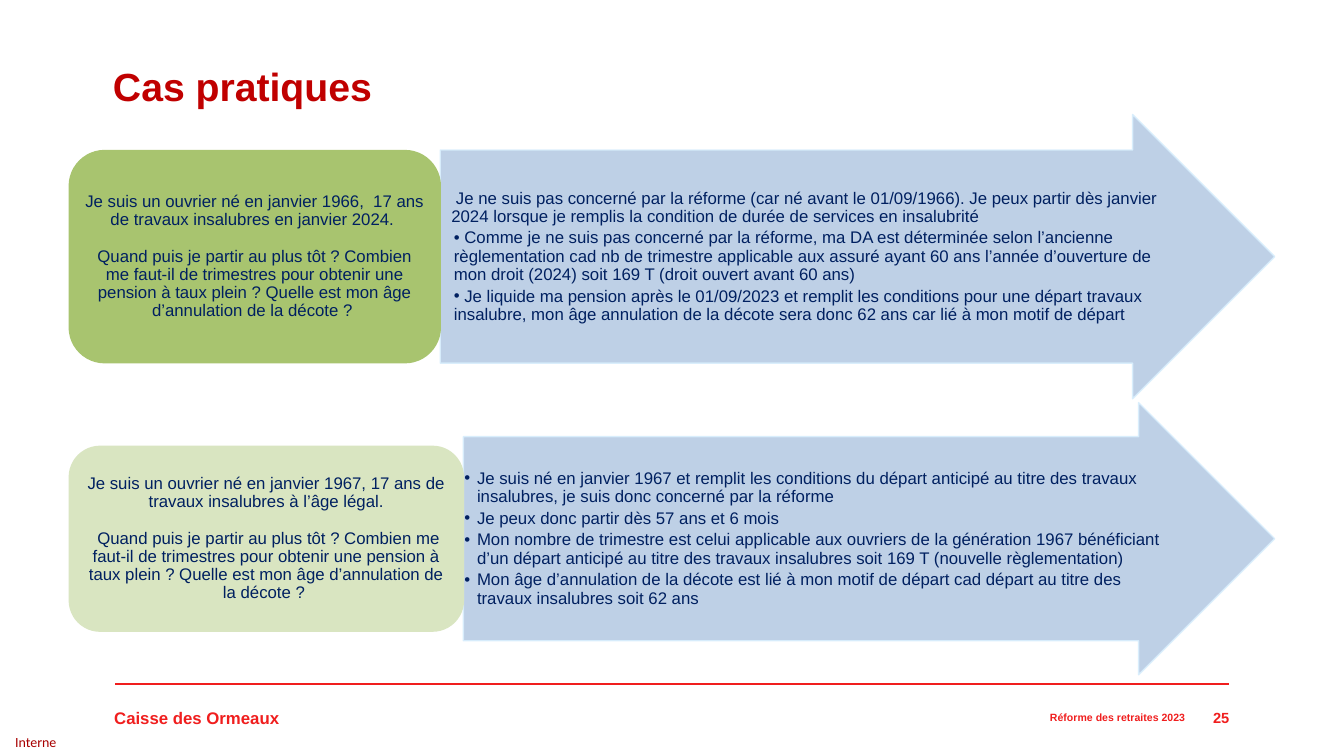
from lxml import etree
from pptx import Presentation
from pptx.dml.color import RGBColor
from pptx.enum.shapes import MSO_CONNECTOR, MSO_SHAPE
from pptx.enum.text import MSO_ANCHOR, MSO_AUTO_SIZE, PP_ALIGN
from pptx.oxml.ns import qn
from pptx.util import Pt

COLORS = {
    "title": "C00000", "footer": "F01E1E", "label": "A80000", "text": "002060",
    "green": "A8C46F", "pale_green": "D9E5C1", "arrow": "B7CBE4", "arrow_line": "D8EEFD",
}
LEFT, RIGHT = 49.5, 910.5

QUESTION_END = ("Quand puis je partir au plus tôt ? Combien me faut-il de trimestres pour obtenir "
                "une pension à taux plein ? Quelle est mon âge d’annulation de la décote ? ")
CASES = [
    dict(center=183.3, size=(265, 151.5), arrow_height=203, color="green", hanging=False,
         question=["Je suis un ouvrier né en janvier 1966,  17 ans de travaux insalubres en janvier 2024. ",
                   QUESTION_END],
         intro=" Je ne suis pas concerné par la réforme (car né avant le 01/09/1966). "
               "Je peux partir dès janvier 2024 lorsque je remplis la condition de durée de "
               "services en insalubrité",
         answers=[
             " Comme je ne suis pas concerné par la réforme, ma DA est déterminée selon l’ancienne "
             "règlementation cad nb de trimestre applicable aux assuré ayant 60 ans l’année "
             "d’ouverture de mon droit (2024) soit 169 T (droit ouvert avant 60 ans)",
             " Je liquide ma pension après le 01/09/2023 et remplit les conditions pour une départ "
             "travaux insalubre, mon âge annulation de la décote sera donc 62 ans car lié à mon "
             "motif de départ"]),
    dict(center=384.8, size=(281.5, 132), arrow_height=194.4, color="pale_green", hanging=True,
         question=["Je suis un ouvrier né en janvier 1967, 17 ans de travaux insalubres à l’âge légal.",
                   " " + QUESTION_END],
         intro=None,
         answers=[
             "Je suis né en janvier 1967 et remplit les conditions du départ anticipé au titre des "
             "travaux insalubres, je suis donc concerné par la réforme",
             "Je peux donc partir dès 57 ans et 6 mois ",
             "Mon nombre de trimestre est celui applicable aux ouvriers de la génération 1967 "
             "bénéficiant d’un départ anticipé au titre des travaux insalubres soit 169 T "
             "(nouvelle règlementation)",
             "Mon âge d’annulation de la décote est lié à mon motif de départ cad départ au titre "
             "des travaux insalubres soit 62 ans"]),
]


def rgb(name):
    return RGBColor.from_string(COLORS[name])


def set_margins(frame, left, top, right, bottom):
    frame.margin_left, frame.margin_top = Pt(left), Pt(top)
    frame.margin_right, frame.margin_bottom = Pt(right), Pt(bottom)


def write(paragraph, text, size=12, color="text", bold=False, font="Arial",
          align=PP_ALIGN.LEFT, spacing=0.9, before=0, after=0, margin=0, indent=0, bullet=False):
    run = paragraph.add_run()
    run.text = text
    run.font.size, run.font.bold, run.font.name = Pt(size), bold, font
    run.font.color.rgb = rgb(color)
    paragraph.alignment = align
    paragraph.line_spacing = spacing
    paragraph.space_before, paragraph.space_after = Pt(before), Pt(after)
    properties = paragraph._p.get_or_add_pPr()
    properties.set("marL", str(Pt(margin)))
    properties.set("indent", str(Pt(indent)))
    if bullet:
        etree.SubElement(properties, qn("a:buFont")).set("typeface", "Arial")
        etree.SubElement(properties, qn("a:buChar")).set("char", "•")
    else:
        etree.SubElement(properties, qn("a:buNone"))


def next_paragraph(frame):
    """Return the empty first paragraph, or a new one."""
    first = frame.paragraphs[0]
    return frame.add_paragraph() if first.runs else first


def add_panel(slide, preset, box, fill, line, opacity=None):
    shape = slide.shapes.add_shape(preset, *map(Pt, box))
    shape.shadow.inherit = False
    shape.fill.solid()
    shape.fill.fore_color.rgb = rgb(fill)
    shape.line.color.rgb = rgb(line)
    shape.line.width = Pt(1)
    if opacity:
        for color in shape._element.spPr.iter(qn("a:srgbClr")):
            etree.SubElement(color, qn("a:alpha")).set("val", str(opacity * 1000))
    shape.text_frame.word_wrap = True
    shape.text_frame.vertical_anchor = MSO_ANCHOR.MIDDLE
    return shape


def add_label(slide, box, text, margins=(7.2, 3.6, 7.2, 3.6), **text_format):
    frame = slide.shapes.add_textbox(*map(Pt, box)).text_frame
    frame.word_wrap = True
    frame.vertical_anchor = MSO_ANCHOR.MIDDLE
    set_margins(frame, *margins)
    write(frame.paragraphs[0], text, spacing=1, **text_format)


def add_title(slide, box, text):
    title = slide.shapes.title
    title.left, title.top, title.width, title.height = map(Pt, box)
    frame = title.text_frame
    frame.auto_size = MSO_AUTO_SIZE.NONE
    frame.vertical_anchor = MSO_ANCHOR.MIDDLE
    write(frame.paragraphs[0], text, size=28, color="title", bold=True)


def add_case(slide, center, size, arrow_height, color, hanging, question, intro, answers):
    """Place a question box and its answer arrow on one horizontal axis."""
    width, height = size
    arrow_left = LEFT + width
    arrow = add_panel(slide, MSO_SHAPE.RIGHT_ARROW,
                      (arrow_left, center - arrow_height / 2, RIGHT - arrow_left, arrow_height),
                      "arrow", "arrow_line", opacity=90)
    arrow.adjustments[0], arrow.adjustments[1] = 0.75, 0.5
    frame = arrow.text_frame
    set_margins(frame, 0.7, 0.7, 0.7, 0.7)
    if intro:
        write(next_paragraph(frame), intro, margin=7.2, after=2.6)
    for answer in answers:
        write(next_paragraph(frame), answer, margin=9, indent=-9 if hanging else 0,
              after=2.6, bullet=True)

    panel = add_panel(slide, MSO_SHAPE.ROUNDED_RECTANGLE,
                      (LEFT, center - height / 2, width, height), color, color)
    set_margins(panel.text_frame, 3.6, 2.2, 3.6, 2.2)
    for index, text in enumerate(question):
        write(next_paragraph(panel.text_frame), text, align=PP_ALIGN.CENTER, before=13 * index)


def add_footer(slide, left, top, right):
    rule = slide.shapes.add_connector(MSO_CONNECTOR.STRAIGHT, Pt(left), Pt(top), Pt(right), Pt(top))
    rule.line.color.rgb = rgb("footer")
    rule.line.width = Pt(1.5)
    etree.SubElement(rule._element.spPr, qn("a:effectLst"))
    row, height = top + 13, 22
    add_label(slide, (left - 8, row, 160, height), "Caisse des Ormeaux",
              color="footer", bold=True)
    add_label(slide, (right - 337, row, 313, height), "Réforme des retraites 2023",
              size=7.5, color="footer", bold=True, align=PP_ALIGN.RIGHT)
    add_label(slide, (right - 35, row, 42.5, height), "25",
              size=10.5, color="footer", bold=True, align=PP_ALIGN.RIGHT)
    add_label(slide, (0, 519.5, 51, 21), "Interne", margins=(10.8, 0, 0, 0),
              size=10, color="label", font="Calibri")


def main():
    presentation = Presentation()
    presentation.slide_width, presentation.slide_height = Pt(960), Pt(540)
    slide = presentation.slides.add_slide(presentation.slide_layouts[5])
    add_title(slide, (73.5, 45.3, 822, 36.7), "Cas pratiques")
    for case in CASES:
        add_case(slide, **case)
    add_footer(slide, 82.5, 488.7, 877.7)
    presentation.save("out.pptx")


if __name__ == "__main__":
    main()
